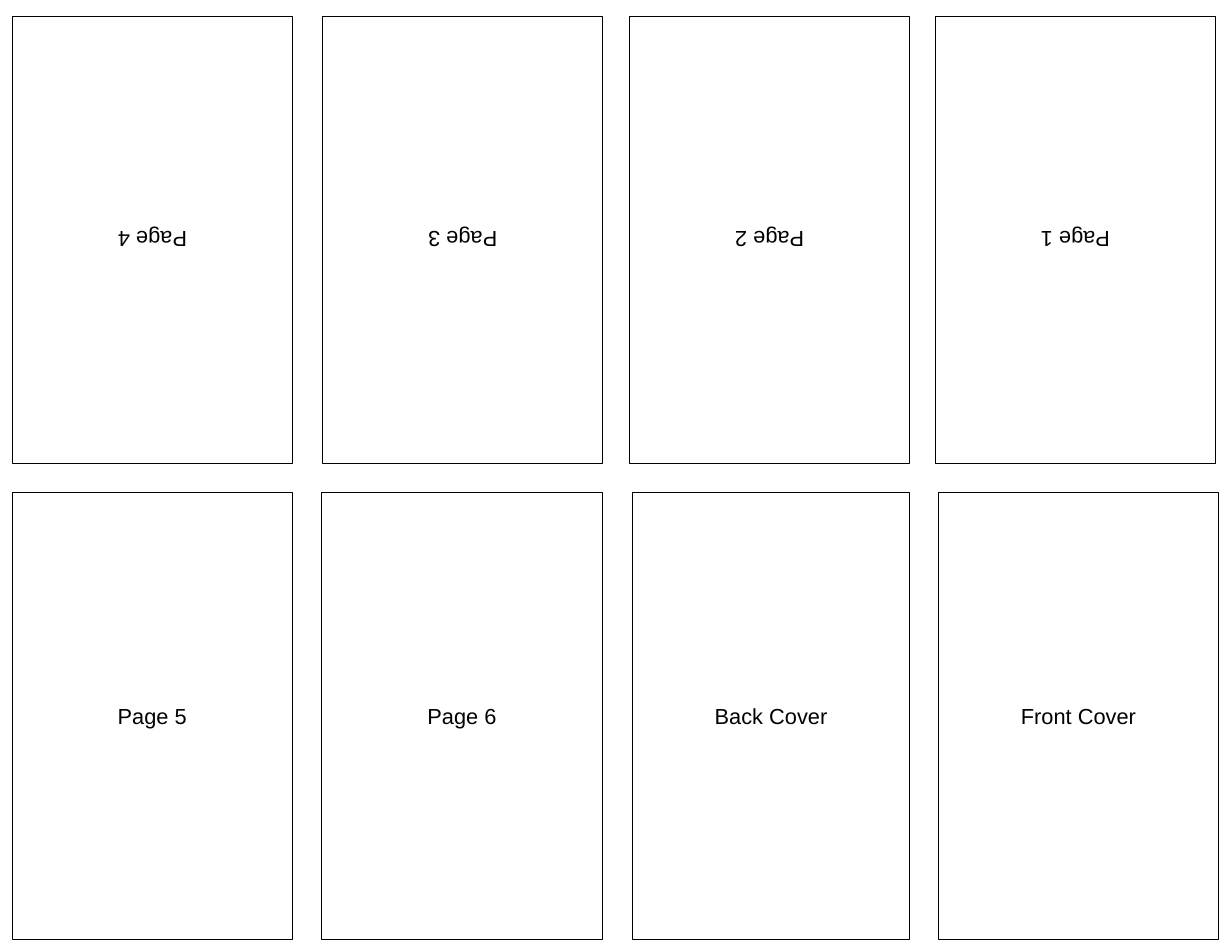
from pptx import Presentation
from pptx.dml.color import RGBColor
from pptx.enum.shapes import MSO_SHAPE
from pptx.enum.text import MSO_ANCHOR, PP_ALIGN
from pptx.util import Inches, Pt

RECT = MSO_SHAPE.RECTANGLE
MIDDLE = MSO_ANCHOR.MIDDLE
CENTER = PP_ALIGN.CENTER

HEIGHT = 3.99
# Each row: top, rotation, panels as (label, left, width)
ROWS = [
    (0.15, 180, [("Page 4", 0.11, 2.5), ("Page 3", 2.88, 2.5),
                 ("Page 2", 5.62, 2.5), ("Page 1", 8.35, 2.5)]),
    (4.4, 0, [("Page 5", 0.11, 2.5), ("Page 6", 2.87, 2.51),
              ("Back Cover", 5.65, 2.47), ("Front Cover", 8.38, 2.5)]),
]


def color(code):
    return RGBColor.from_string(code)


class Booklet:
    font = "Arial"
    size = Pt(14)
    ink = "000000"
    rule = Pt(0.75)
    inset = Inches(0.1)

    def __init__(self, slide):
        self.slide = slide

    def panel(self, label, left, top, width, turn):
        shape = self.slide.shapes.add_shape(
            RECT, Inches(left), Inches(top), Inches(width), Inches(HEIGHT))
        shape.rotation = turn
        shape.shadow.inherit = False
        shape.fill.background()
        shape.line.color.rgb = color(self.ink)
        shape.line.width = self.rule
        frame = shape.text_frame
        frame.word_wrap = True
        frame.vertical_anchor = MIDDLE
        frame.margin_left = frame.margin_right = self.inset
        frame.margin_top = frame.margin_bottom = self.inset
        para = frame.paragraphs[0]
        para.alignment = CENTER
        run = para.add_run()
        run.text = label
        run.font.name = self.font
        run.font.size = self.size
        run.font.color.rgb = color(self.ink)


def main():
    deck = Presentation()
    deck.slide_width, deck.slide_height = Inches(11), Inches(8.5)
    page = Booklet(deck.slides.add_slide(deck.slide_layouts[6]))
    for top, turn, panels in ROWS:
        for label, left, width in panels:
            page.panel(label, left, top, width, turn)
    deck.save("out.pptx")


if __name__ == "__main__":
    main()
